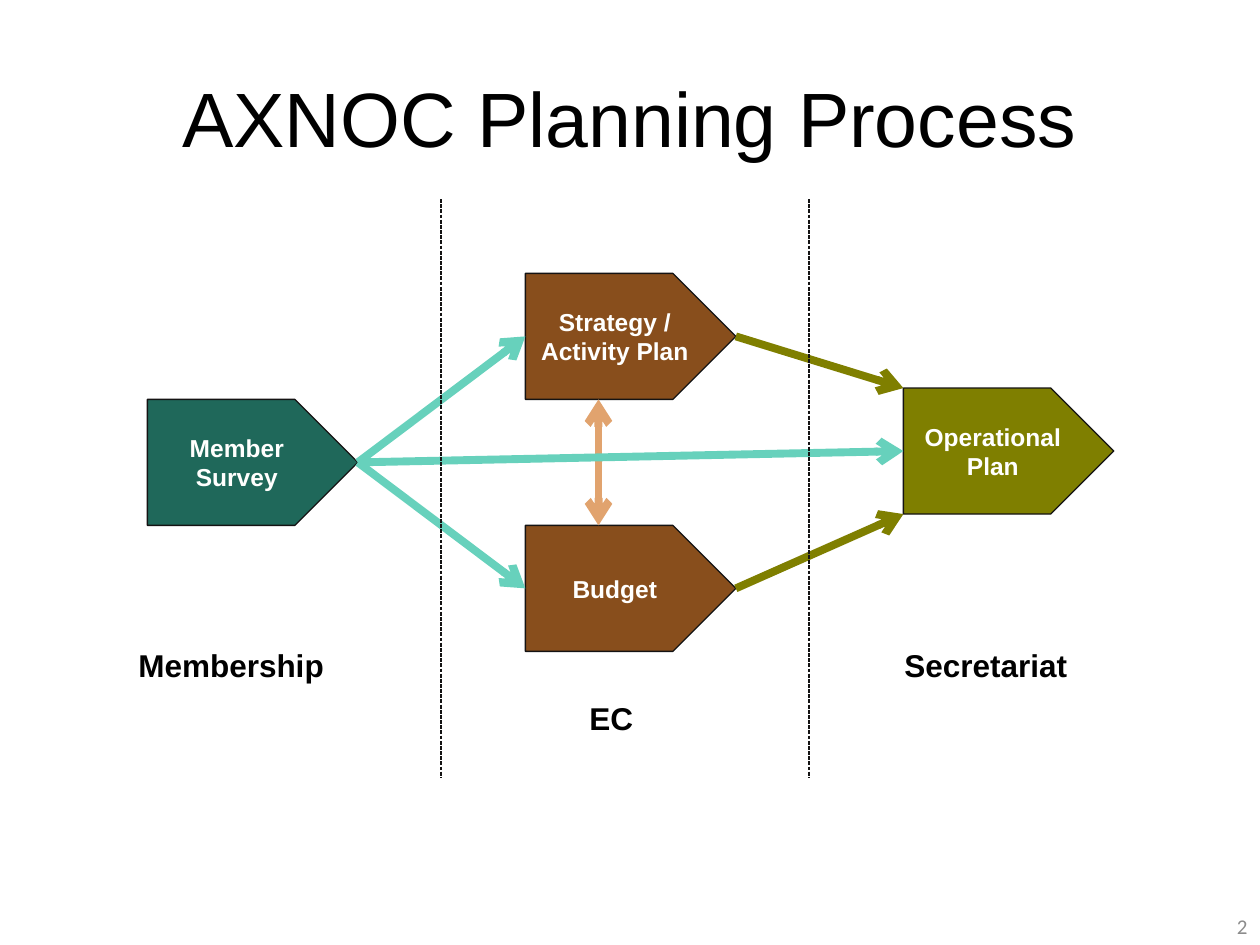
from dataclasses import dataclass

from lxml import etree
from pptx import Presentation
from pptx.dml.color import RGBColor
from pptx.enum.dml import MSO_LINE
from pptx.enum.shapes import MSO_CONNECTOR, MSO_SHAPE
from pptx.enum.text import MSO_ANCHOR, MSO_AUTO_SIZE, PP_ALIGN
from pptx.oxml.ns import qn
from pptx.util import Inches, Pt

STRAIGHT = MSO_CONNECTOR.STRAIGHT
PENTAGON = MSO_SHAPE.PENTAGON
DASH = MSO_LINE.SQUARE_DOT
MIDDLE = MSO_ANCHOR.MIDDLE
GROW = MSO_AUTO_SIZE.SHAPE_TO_FIT_TEXT
LEFT, CENTER, RIGHT = PP_ALIGN.LEFT, PP_ALIGN.CENTER, PP_ALIGN.RIGHT
LEFT_SIDE, RIGHT_SIDE = 1, 3


@dataclass(frozen=True)
class Theme:
    """Hold the colours, fonts and sizes of the deck."""
    font: str = "Arial"
    number_font: str = "Calibri"
    black: str = "000000"
    outline: str = "141313"
    white: str = "FFFFFE"
    gray: str = "8C8C8C"
    green: str = "1F685A"
    olive: str = "7F7F00"
    brown: str = "884E1C"
    teal: str = "67D1BC"
    tan: str = "E1A36E"
    title_size: float = 44
    label_size: float = 18
    step_size: float = 14
    number_size: float = 12
    thin: float = 0.75
    thick: float = 4.5


THEME = Theme()
STEP_SIZE = (1.67, 1)
STEPS = {
    "Member Survey": (1.17, 3.17, THEME.green),
    "Strategy / Activity Plan": (4.17, 2.17, THEME.brown),
    "Budget": (4.17, 4.17, THEME.brown),
    "Operational Plan": (7.17, 3.08, THEME.olive),
}
LABELS = {
    "Membership": (1, 5.08, 2.18, 0.5),
    "EC": (4.58, 5.5, 0.67, 0.5),
    "Secretariat": (7.08, 5.08, 1.94, 0.5),
}


def format_text(para, size, color, align=LEFT, bold=False, name=THEME.font):
    """Apply the alignment and font of a paragraph."""
    para.alignment = align
    values = {"size": Pt(size), "bold": bold, "name": name}
    for key, value in values.items():
        setattr(para.font, key, value)
    para.font.color.rgb = RGBColor.from_string(color)


def add_title(page, box, text):
    """Place and format the title placeholder."""
    title = page.shapes.title
    for key, value in zip(("left", "top", "width", "height"), box):
        setattr(title, key, Inches(value))
    title.text_frame.text = text
    title.text_frame.vertical_anchor = MIDDLE
    format_text(title.text_frame.paragraphs[0], THEME.title_size, THEME.black, CENTER)


def add_step(page, box, text, fill):
    """Draw one pentagon step of the process."""
    step = page.shapes.add_shape(PENTAGON, *map(Inches, box))
    step.shadow.inherit = False
    step.fill.solid()
    step.fill.fore_color.rgb = RGBColor.from_string(fill)
    step.line.color.rgb = RGBColor.from_string(THEME.outline)
    step.line.width = Pt(THEME.thin)
    frame = step.text_frame
    frame.text = text
    frame.word_wrap = True
    frame.vertical_anchor = MIDDLE
    format_text(frame.paragraphs[0], THEME.step_size, THEME.white, CENTER, True)
    return step


def add_label(page, box, text):
    """Write the name of a column's owner."""
    frame = page.shapes.add_textbox(*map(Inches, box)).text_frame
    frame.text = text
    frame.word_wrap = False
    frame.auto_size = GROW
    format_text(frame.paragraphs[0], THEME.label_size, THEME.black, bold=True)


def add_line(page, ends, color, width, heads=()):
    """Draw a straight line with arrowheads at the named ends."""
    line = page.shapes.add_connector(STRAIGHT, *map(Inches, ends))
    line.line.color.rgb = RGBColor.from_string(color)
    line.line.width = Pt(width)
    outline = line.line._get_or_add_ln()
    for head in heads:
        etree.SubElement(outline, qn(f"a:{head}"), type="arrow")
    etree.SubElement(line._element.spPr, qn("a:effectLst"))
    return line


def add_flow(page, steps):
    """Link the steps with arrows."""
    survey, strategy, budget, plan = steps.values()
    right = 4.17 + STEP_SIZE[0]
    plan_left, plan_top, _ = STEPS["Operational Plan"]
    add_line(page, (4.75, 3.17, 4.75, 4.17), THEME.tan, THEME.thick, ("headEnd", "tailEnd"))
    for target in (strategy, budget, plan):
        arrow = add_line(page, (2.84, 3.67, 4.17, 3.67), THEME.teal, THEME.thick, ("tailEnd",))
        arrow.begin_connect(survey, RIGHT_SIDE)
        arrow.end_connect(target, LEFT_SIDE)
    for source, start, end in ((strategy, 2.67, plan_top), (budget, 4.67, plan_top + STEP_SIZE[1])):
        arrow = add_line(page, (right, start, plan_left, end), THEME.olive, THEME.thick, ("tailEnd",))
        arrow.begin_connect(source, RIGHT_SIDE)


def add_process(page):
    """Draw the steps, arrows, column labels and dividers."""
    steps = {text: add_step(page, (left, top, *STEP_SIZE), text, fill)
             for text, (left, top, fill) in STEPS.items()}
    for text, box in LABELS.items():
        add_label(page, box, text)
    add_flow(page, steps)
    for x in (3.5, 6.42):
        divider = add_line(page, (x, 1.58, x, 6.17), THEME.outline, THEME.thin)
        divider.line.dash_style = DASH


def add_page_number(page, box, number):
    """Write the page number at the lower right."""
    frame = page.shapes.add_textbox(*map(Inches, box)).text_frame
    frame.text = number
    frame.word_wrap = True
    frame.vertical_anchor = MIDDLE
    format_text(frame.paragraphs[0], THEME.number_size, THEME.gray, RIGHT, name=THEME.number_font)


def main():
    """Build and save the deck."""
    deck = Presentation()
    deck.slide_width, deck.slide_height = Inches(10), Inches(7.5)
    page = deck.slides.add_slide(deck.slide_layouts[5])
    add_title(page, (0.5, 0.3, 9, 1.25), "AXNOC Planning Process")
    add_page_number(page, (7.67, 7.15, 2.33, 0.4), "2")
    add_process(page)
    deck.save("out.pptx")


if __name__ == "__main__":
    main()
